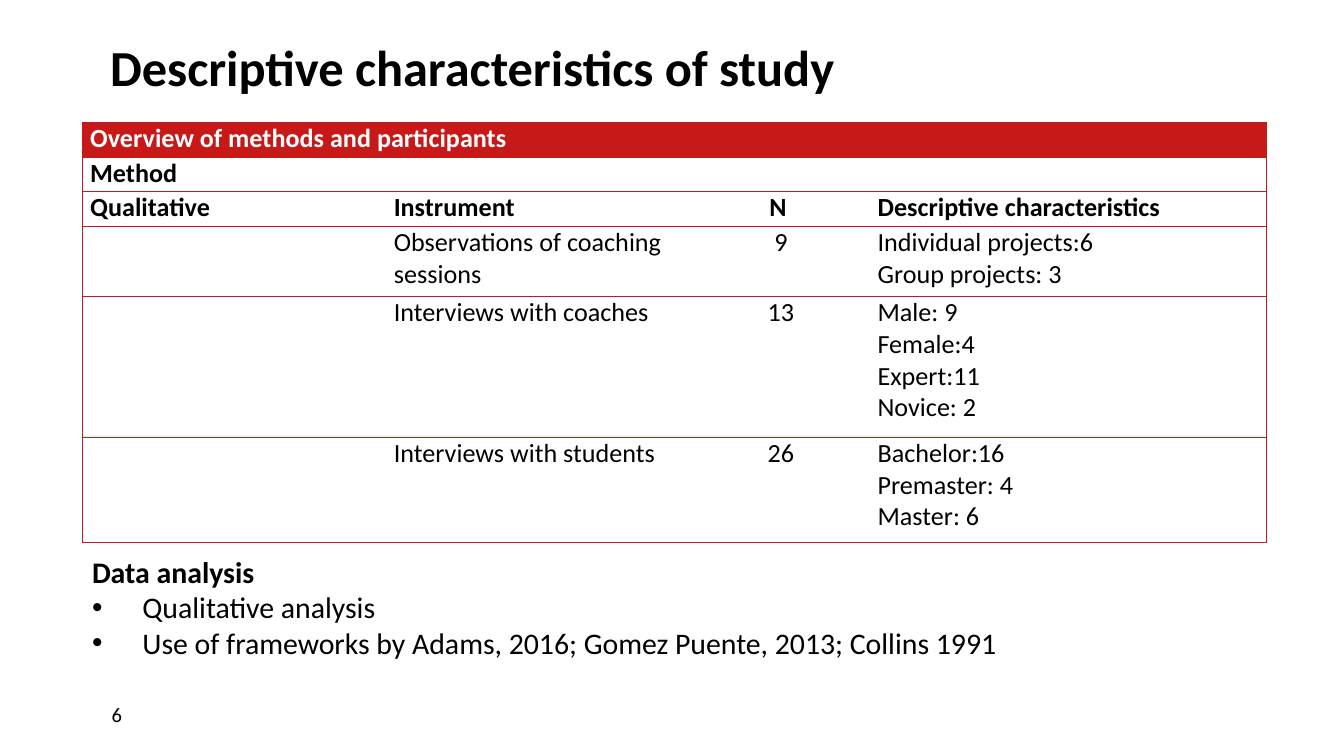
from dataclasses import dataclass

from lxml import etree
from pptx import Presentation
from pptx.dml.color import RGBColor
from pptx.enum import shapes, text
from pptx.oxml import ns
from pptx.util import Pt


@dataclass(frozen=True)
class Theme:
    font: str = "Calibri"
    red: str = "C81919"
    black: str = "000000"
    white: str = "FFFFFF"
    title: float = 27
    body: float = 16
    table: float = 14
    number: float = 11
    rule: float = 0.5


THEME = Theme()
COLUMNS = (162.7, 164.2, 95, 212.4)
ROW_HEIGHTS = (18.6, 18.6, 18.6, 37.6, 75.4, 56.3)
ROWS = (
    ("Overview of methods and participants", "", "", ""),
    ("Method", "", "", ""),
    ("Qualitative", "Instrument", "N ", "Descriptive characteristics"),
    ("", "Observations of coaching sessions", "9",
     "Individual projects:6\nGroup projects: 3"),
    ("", "Interviews with coaches", "13",
     "Male: 9\nFemale:4\nExpert:11\nNovice: 2"),
    ("", "Interviews with students", "26",
     "Bachelor:16\nPremaster: 4\nMaster: 6"),
)
BOLD_ROWS = 3
ALIGN = text.PP_ALIGN
COLUMN_ALIGNMENTS = (ALIGN.JUSTIFY, ALIGN.LEFT, ALIGN.CENTER, ALIGN.JUSTIFY)


def color(value):
    return RGBColor.from_string(value)


def style_para(para, size, bold=False, ink=THEME.black):
    for span in para.runs:
        span.font.name = THEME.font
        span.font.size = Pt(size)
        span.font.bold = bold
        span.font.color.rgb = color(ink)


def set_margins(frame, left, top, right, bottom):
    frame.margin_left, frame.margin_top = Pt(left), Pt(top)
    frame.margin_right, frame.margin_bottom = Pt(right), Pt(bottom)


def add_text_box(page, left, top, width, height, content, margins):
    box = page.shapes.add_textbox(Pt(left), Pt(top), Pt(width), Pt(height))
    frame = box.text_frame
    frame.word_wrap = True
    set_margins(frame, *margins)
    frame.text = content
    return frame


def add_title(page):
    frame = add_text_box(page, 59, 24.5, 594.7, 42.5,
                         "Descriptive characteristics of study", (0, 0, 0, 0))
    para = frame.paragraphs[0]
    para.line_spacing = Pt(27)
    style_para(para, THEME.title, bold=True)


def add_bullet(para, indent):
    properties = para._p.get_or_add_pPr()
    properties.set("marL", str(Pt(indent)))
    properties.set("indent", str(-Pt(indent)))
    etree.SubElement(properties, ns.qn("a:buFont")).set("typeface", "Arial")
    etree.SubElement(properties, ns.qn("a:buChar")).set("char", "•")


def add_analysis(page):
    lines = (
        "Data analysis",
        "Qualitative analysis",
        "Use of frameworks by Adams, 2016; Gomez Puente, 2013; Collins 1991",
    )
    frame = add_text_box(page, 44, 293.4, 647.3, 89, "\n".join(lines), (5.3, 3, 5.3, 3))
    heading, *bullets = frame.paragraphs
    style_para(heading, THEME.body, bold=True)
    for para in bullets:
        add_bullet(para, 27)
        style_para(para, THEME.body)


def set_border(cell, side, visible):
    line = etree.SubElement(cell._tc.get_or_add_tcPr(), ns.qn(f"a:ln{side}"))
    line.set("w", str(Pt(THEME.rule)))
    if visible:
        fill = etree.SubElement(line, ns.qn("a:solidFill"))
        etree.SubElement(fill, ns.qn("a:srgbClr")).set("val", THEME.red)
    else:
        etree.SubElement(line, ns.qn("a:noFill"))


def fill_cell(cell, content, row, column):
    set_margins(cell, 4.3, 0, 4.3, 0)
    cell.text = content
    header = row == 0
    for para in cell.text_frame.paragraphs:
        para.alignment = COLUMN_ALIGNMENTS[column]
        style_para(para, THEME.table, row < BOLD_ROWS,
                   THEME.white if header else THEME.black)
        para._p.get_or_add_endParaRPr().set("sz", str(int(THEME.table * 100)))
    set_border(cell, "L", column == 0)
    set_border(cell, "R", column == len(COLUMNS) - 1)
    set_border(cell, "T", True)
    set_border(cell, "B", True)
    if header:
        cell.fill.solid()
        cell.fill.fore_color.rgb = color(THEME.red)
    else:
        cell.fill.background()


def add_overview(page):
    table = page.shapes.add_table(
        len(ROWS), len(COLUMNS), Pt(44), Pt(65.6),
        Pt(sum(COLUMNS)), Pt(sum(ROW_HEIGHTS))).table
    table.first_row = table.horz_banding = False
    for column, width in zip(table.columns, COLUMNS):
        column.width = Pt(width)
    for row, height in zip(table.rows, ROW_HEIGHTS):
        row.height = Pt(height)
    for row, contents in enumerate(ROWS):
        for column, content in enumerate(contents):
            fill_cell(table.cell(row, column), content, row, column)
    table.cell(0, 0).merge(table.cell(0, 2))


def add_page_number(page):
    box = page.shapes.add_shape(shapes.MSO_SHAPE.RECTANGLE,
                                Pt(0), Pt(360), Pt(87.8), Pt(45))
    box.shadow.inherit = False
    box.fill.solid()
    box.fill.fore_color.rgb = color(THEME.white)
    box.line.fill.background()
    frame = box.text_frame
    set_margins(frame, 59.8, 0, 0, 0)
    frame.vertical_anchor = text.MSO_ANCHOR.MIDDLE
    frame.text = "6"
    para = frame.paragraphs[0]
    para.alignment = ALIGN.LEFT
    style_para(para, THEME.number)


def main():
    deck = Presentation()
    deck.slide_width, deck.slide_height = Pt(720), Pt(405)
    page = deck.slides.add_slide(deck.slide_layouts[6])
    add_title(page)
    add_analysis(page)
    add_overview(page)
    add_page_number(page)
    deck.save("out.pptx")


if __name__ == "__main__":
    main()
